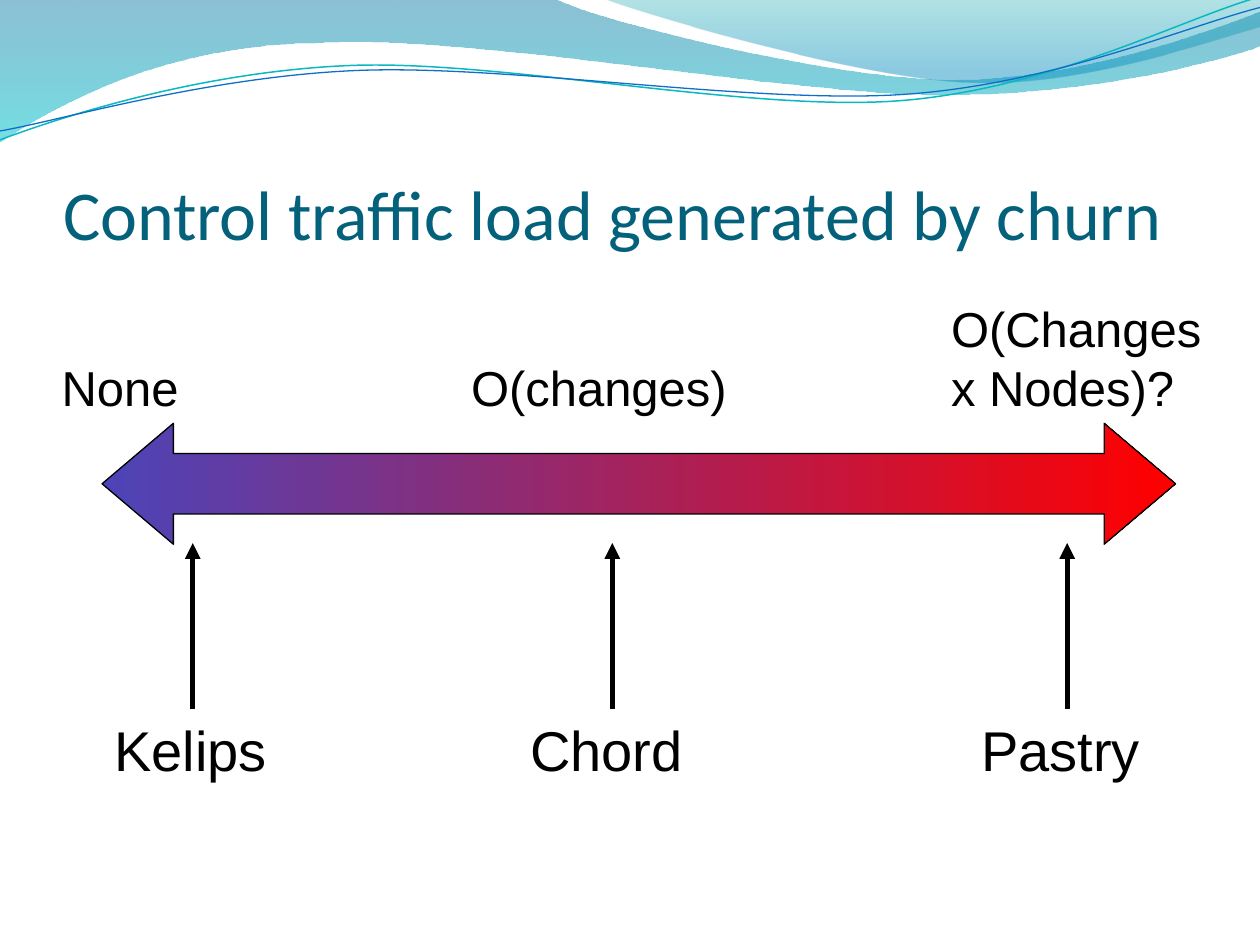
import math
from dataclasses import dataclass

from lxml import etree
from pptx import Presentation
from pptx.dml.color import RGBColor
from pptx.enum import shapes, text
from pptx.oxml.ns import qn
from pptx.util import Inches, Pt


@dataclass(frozen=True)
class Theme:
    title_font: str = "Calibri"
    body_font: str = "Arial"
    title_size: int = 40
    name_size: int = 32
    load_size: int = 28
    title_color: str = "04617B"
    ink: str = "000000"
    teal_line: str = "0AB8BF"
    blue_line: str = "0F6FC6"
    # Gradient stops: position %, colour, opacity %
    wave: tuple = ((0, "0074A1", 45), (100, "00C6CF", 55))
    crest: tuple = ((0, "00A1A9", 30), (80, "008BBF", 45))
    scale: tuple = ((0, "4C44B8", 100), (100, "FF0000", 100))


def turn(point, center, degrees):
    """Turn a point clockwise around a center."""
    cos, sin = math.cos(math.radians(degrees)), math.sin(math.radians(degrees))
    dx, dy = point[0] - center[0], point[1] - center[1]
    return center[0] + dx * cos - dy * sin, center[1] + dx * sin + dy * cos


class SlideBuilder:
    def __init__(self, slide, theme):
        self.slide = slide
        self.theme = theme

    def set_line(self, shape, color, width):
        shape.line.color.rgb = RGBColor.from_string(color)
        shape.line.width = Pt(width)

    def set_gradient(self, shape, stops, angle):
        shape.fill.gradient()
        gradient = shape.fill._xPr.find(qn("a:gradFill"))
        for child in list(gradient):
            gradient.remove(child)
        stop_list = etree.SubElement(gradient, qn("a:gsLst"))
        for position, color, opacity in stops:
            stop = etree.SubElement(stop_list, qn("a:gs"), pos=str(position * 1000))
            rgb = etree.SubElement(stop, qn("a:srgbClr"), val=color)
            if opacity < 100:
                etree.SubElement(rgb, qn("a:alpha"), val=str(opacity * 1000))
        etree.SubElement(gradient, qn("a:lin"), ang=str(angle * 60000), scaled="0")

    def outline(self, start, segments, closed, center=(0, 0), tilt=0):
        """Draw lines (1 point) and cubic curves (3 points), tilted around a center."""
        points = [start] + [point for segment in segments for point in segment]
        points = [tuple(map(Inches, turn(point, center, -tilt))) for point in points]
        builder = self.slide.shapes.build_freeform(*points[0], scale=1.0)
        builder.add_line_segments(points[1:], close=closed)
        shape = builder.convert_to_shape()
        shape.shadow.inherit = False
        shape.rotation = tilt

        # Join each three points of a curve into one cubic segment
        steps = iter(list(shape._element.iter(qn("a:lnTo"))))
        for segment in segments:
            group = [next(steps) for _ in segment]
            if len(group) == 3:
                cubic = etree.Element(qn("a:cubicBezTo"))
                group[0].addprevious(cubic)
                for step in group:
                    cubic.append(step[0])
                    step.getparent().remove(step)
        return shape

    def wave(self, start, segments, stops):
        shape = self.outline(start, segments, closed=True)
        self.set_gradient(shape, stops, 90)
        shape.line.fill.background()

    def curve(self, start, segments, center, color, width):
        shape = self.outline(start, segments, False, center, tilt=-2.7)
        shape.fill.background()
        self.set_line(shape, color, width)

    def text_box(self, box, words, size, font, color, wrap=False):
        shape = self.slide.shapes.add_textbox(*map(Inches, box))
        frame = shape.text_frame
        frame.word_wrap = wrap
        frame.auto_size = text.MSO_AUTO_SIZE.SHAPE_TO_FIT_TEXT
        paragraph = frame.paragraphs[0]
        paragraph.text = words
        paragraph.font.size = Pt(size)
        paragraph.font.name = font
        paragraph.font.color.rgb = RGBColor.from_string(color)
        return frame

    def title(self, box, words):
        theme = self.theme
        frame = self.text_box(box, words, theme.title_size, theme.title_font,
                              theme.title_color, wrap=True)
        frame.auto_size = text.MSO_AUTO_SIZE.NONE
        frame.vertical_anchor = text.MSO_ANCHOR.BOTTOM
        frame.margin_left = frame.margin_right = frame.margin_bottom = 0
        frame.margin_top = Inches(0.05)

    def label(self, box, words, size, wrap=False):
        self.text_box(box, words, size, self.theme.body_font, self.theme.ink, wrap)

    def double_arrow(self, box):
        shape = self.slide.shapes.add_shape(
            shapes.MSO_SHAPE.LEFT_RIGHT_ARROW, *map(Inches, box))
        shape.shadow.inherit = False
        shape.adjustments[0] = 0.5
        shape.adjustments[1] = 0.59
        self.set_gradient(shape, self.theme.scale, 0)
        self.set_line(shape, self.theme.ink, 0.75)

    def up_arrow(self, x, bottom, top):
        connector = self.slide.shapes.add_connector(
            shapes.MSO_CONNECTOR.STRAIGHT,
            Inches(x), Inches(bottom), Inches(x), Inches(top))
        self.set_line(connector, self.theme.ink, 3)
        etree.SubElement(connector.line._get_or_add_ln(), qn("a:tailEnd"), type="triangle")
        etree.SubElement(connector._element.spPr, qn("a:effectLst"))


def main():
    presentation = Presentation()
    presentation.slide_width = Inches(10)
    presentation.slide_height = Inches(7.5)
    slide = presentation.slides.add_slide(presentation.slide_layouts[6])
    theme = Theme()
    builder = SlideBuilder(slide, theme)

    # Waves across the top
    builder.wave((0, -0.01), [
        [(4.4, -0.01)],
        [(4.76, 0.17), (6.64, 0.63), (7.58, 0.63)],
        [(8.53, 0.63), (9.58, 0.26), (10, 0.09)],
        [(10.01, 0.36)],
        [(9.83, 0.44), (8.7, 0.76), (7.46, 0.75)],
        [(6.22, 0.75), (3.82, 0.28), (2.57, 0.34)],
        [(1.29, 0.35), (0.46, 0.83), (-0.01, 1.13)],
    ], theme.wave)
    builder.wave((4.79, -0.01), [
        [(5.09, 0.11), (6.82, 0.62), (7.69, 0.65)],
        [(8.56, 0.69), (9.61, 0.32), (10, 0.21)],
        [(10, 0)],
    ], theme.crest)
    builder.curve((0, 1.11), [
        [(0.48, 0.93), (1.58, 0.57), (2.77, 0.52)],
        [(3.95, 0.47), (5.93, 0.89), (7.13, 0.8)],
        [(8.33, 0.71), (9.38, 0.15), (9.98, -0.02)],
    ], (4.99, 0.58), theme.teal_line, 0.85)
    builder.curve((0, 1.04), [
        [(0.47, 0.96), (1.64, 0.61), (2.83, 0.56)],
        [(4.03, 0.51), (5.97, 0.83), (7.17, 0.75)],
        [(8.36, 0.67), (9.41, 0.21), (10, 0.06)],
    ], (5, 0.59), theme.blue_line, 0.75)

    builder.title((0.5, 0.77, 9.08, 1.25), "Control traffic load generated by churn")

    # Load scale, with its levels above
    builder.double_arrow((0.81, 3.36, 8.52, 0.96))
    builder.label((0.39, 2.79, 1.13, 0.57), "None", theme.load_size)
    builder.label((3.64, 2.79, 2.24, 0.57), "O(changes)", theme.load_size)
    builder.label((7.45, 2.32, 2.34, 1.03), "O(Changes x Nodes)?",
                  theme.load_size, wrap=True)

    # Protocols pointing at their place on the scale
    name_top, arrow_top = 5.63, 4.31
    for name, left, width, arrow_x in (("Kelips", 0.81, 1.41, 1.53),
                                       ("Chord", 4.11, 1.41, 4.86),
                                       ("Pastry", 7.69, 1.46, 8.47)):
        builder.label((left, name_top, width, 0.63), name, theme.name_size)
        builder.up_arrow(arrow_x, name_top, arrow_top)

    presentation.save("out.pptx")


if __name__ == "__main__":
    main()
